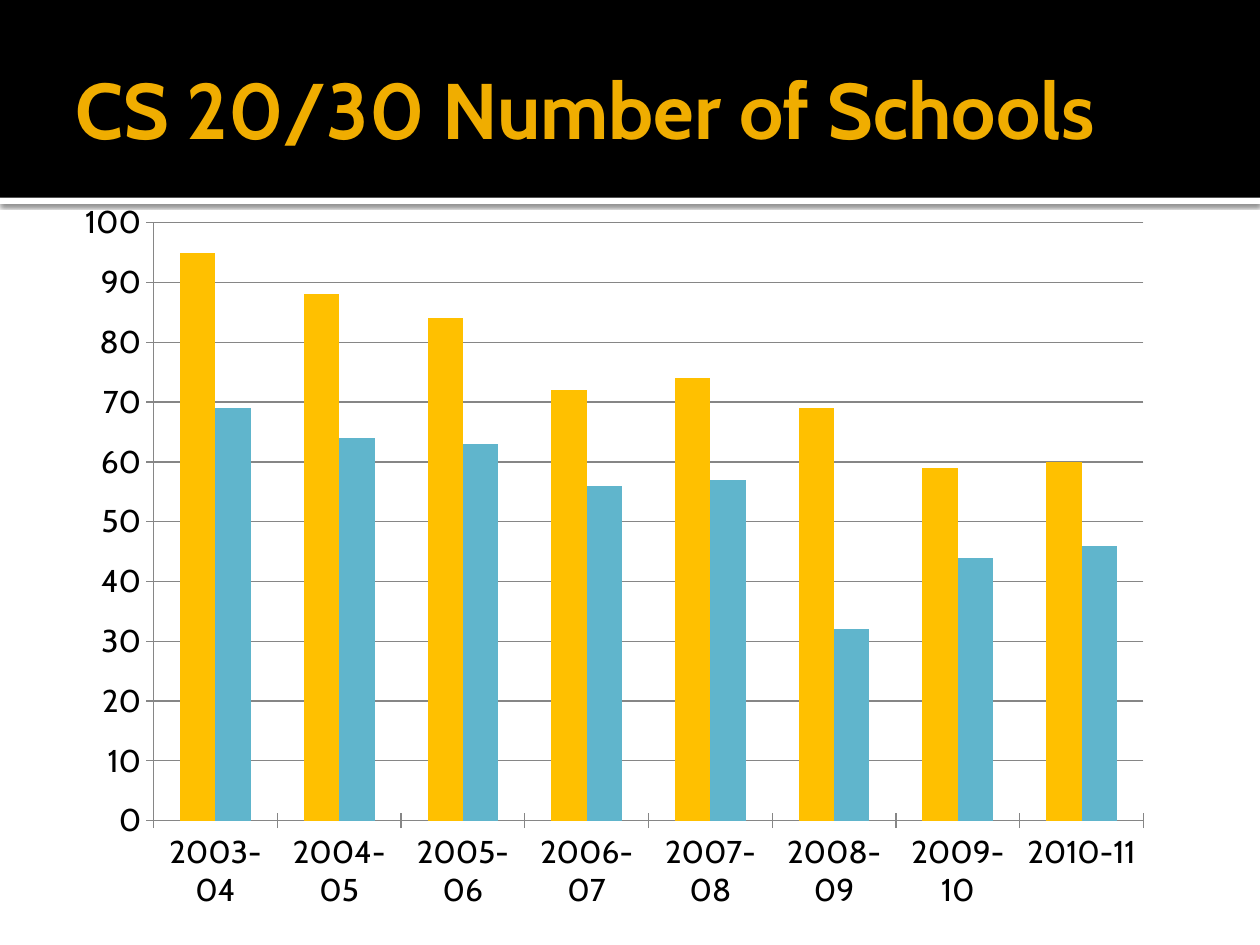
from dataclasses import dataclass

from lxml import etree
from pptx import Presentation
from pptx.chart import data
from pptx.dml.color import RGBColor
from pptx.enum import chart as ch, shapes, text
from pptx.oxml.ns import qn
from pptx.util import Pt


@dataclass(frozen=True)
class Theme:
    font: str = "Cabin"
    title_size: int = 45
    label_size: int = 18
    band: str = "000000"
    strip: str = "FFFFFF"
    title: str = "F0AD00"
    label: str = "000000"
    grid: str = "868686"
    series: tuple = ("FFC000", "60B5CC")


THEME = Theme()
SLIDE_WIDTH, SLIDE_HEIGHT = 720, 540
BAND_HEIGHT = 113

YEARS = [f"{year}-{(year + 1) % 100:02d}" for year in range(2003, 2011)]
SCHOOLS = {
    "Series 1": (95, 88, 84, 72, 74, 69, 59, 60),
    "Series 2": (69, 64, 63, 56, 57, 32, 44, 46),
}


def color(code):
    return RGBColor.from_string(code)


def style_font(font, size, code, bold=False):
    font.name = THEME.font
    font.size = Pt(size)
    font.bold = bold
    font.color.rgb = color(code)


def add_bar(slide, top, height, fill):
    """Full-width header bar without outline."""
    bar = slide.shapes.add_shape(
        shapes.MSO_SHAPE.RECTANGLE, 0, Pt(top), Pt(SLIDE_WIDTH), Pt(height))
    bar.shadow.inherit = False
    bar.fill.solid()
    bar.fill.fore_color.rgb = color(fill)
    bar.line.fill.background()
    return bar


def add_shadow(shape, blur, distance, opacity):
    """Soft black shadow falling straight down."""
    effects = shape._element.spPr.find(qn("a:effectLst"))
    shadow = etree.SubElement(
        effects, qn("a:outerShdw"), blurRad=str(Pt(blur)),
        dist=str(Pt(distance)), dir="5400000", algn="tl", rotWithShape="0")
    black = etree.SubElement(shadow, qn("a:srgbClr"), val="000000")
    etree.SubElement(black, qn("a:alpha"), val=str(opacity * 1000))


def set_title(slide, wording):
    title = slide.shapes.title
    title.left, title.top, title.width, title.height = Pt(36), Pt(12), Pt(648), Pt(99)
    frame = title.text_frame
    frame.text = wording
    frame.word_wrap = True
    frame.auto_size = text.MSO_AUTO_SIZE.NONE
    frame.vertical_anchor = text.MSO_ANCHOR.MIDDLE
    frame.margin_left = Pt(7.2)
    frame.margin_right = frame.margin_top = frame.margin_bottom = Pt(3.6)
    heading = frame.paragraphs[0]
    heading.alignment = text.PP_ALIGN.LEFT
    style_font(heading.runs[0].font, THEME.title_size, THEME.title, bold=True)
    # Bring the title in front of the header band
    slide.shapes._spTree.append(title._element)


def style_axis(axis):
    axis.major_tick_mark = ch.XL_TICK_MARK.CROSS
    axis.minor_tick_mark = ch.XL_TICK_MARK.NONE
    axis.format.line.color.rgb = color(THEME.grid)
    axis.format.line.width = Pt(0.75)


def add_school_chart(slide):
    chart_data = data.CategoryChartData(number_format="#,##0")
    chart_data.categories = YEARS
    for name, counts in SCHOOLS.items():
        chart_data.add_series(name, counts)
    chart = slide.shapes.add_chart(
        ch.XL_CHART_TYPE.COLUMN_CLUSTERED,
        Pt(36), Pt(108), Pt(630), Pt(420), chart_data).chart
    chart.has_legend = False
    chart.has_title = False
    style_font(chart.font, THEME.label_size, THEME.label)

    # Columns
    plot = chart.plots[0]
    plot.vary_by_categories = False
    plot.gap_width = 150
    plot.overlap = 0
    for series, fill in zip(plot.series, THEME.series):
        series.format.fill.solid()
        series.format.fill.fore_color.rgb = color(fill)
        series.invert_if_negative = False

    # Axes and gridlines
    style_axis(chart.category_axis)
    counts_axis = chart.value_axis
    style_axis(counts_axis)
    counts_axis.minimum_scale = 0
    counts_axis.maximum_scale = 100
    counts_axis.major_unit = 10
    counts_axis.tick_labels.number_format = "#,##0"
    counts_axis.tick_labels.number_format_is_linked = False
    counts_axis.has_major_gridlines = True
    gridline = counts_axis.major_gridlines.format.line
    gridline.color.rgb = color(THEME.grid)
    gridline.width = Pt(0.75)


def main():
    deck = Presentation()
    deck.slide_width, deck.slide_height = Pt(SLIDE_WIDTH), Pt(SLIDE_HEIGHT)
    slide = deck.slides.add_slide(deck.slide_layouts[5])

    # Header: white strip with shadow, then the black band
    strip = add_bar(slide, BAND_HEIGHT, 3.6, THEME.strip)
    add_shadow(strip, blur=2.5, distance=0.8, opacity=60)
    add_bar(slide, 0, BAND_HEIGHT, THEME.band)
    set_title(slide, "CS 20/30 Number of Schools")

    # Number of schools by year
    add_school_chart(slide)
    deck.save("out.pptx")


if __name__ == "__main__":
    main()
